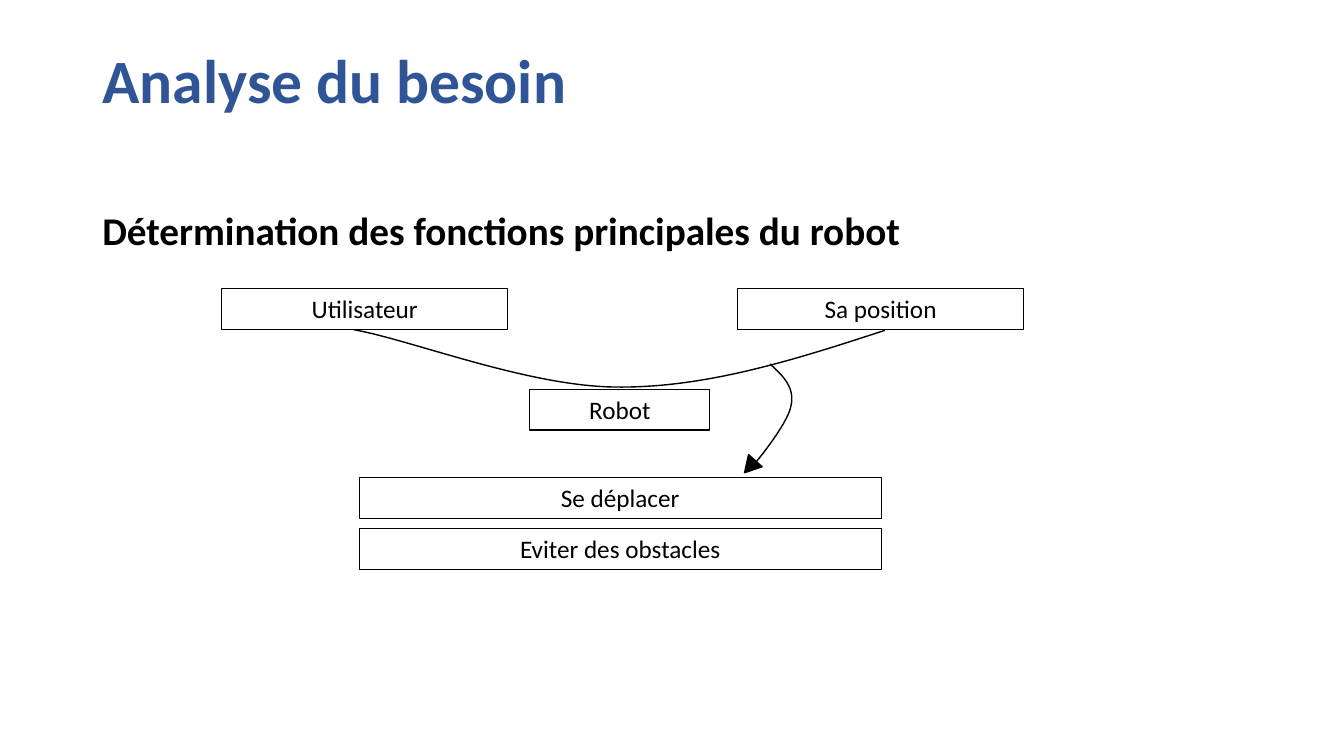
from pptx import Presentation
from pptx.dml.color import RGBColor
from pptx.enum import shapes as kinds, text as txt
from pptx.oxml import ns, xmlchemy
from pptx.util import Pt

BLACK = RGBColor(0x00, 0x00, 0x00)
BLUE = RGBColor(0x2F, 0x55, 0x97)
BOX_HEIGHT = 29.2


def place(shape, left, top, width, height):
    shape.left, shape.top = Pt(left), Pt(top)
    shape.width, shape.height = Pt(width), Pt(height)


def write(shape, words, size, color=BLACK, bold=False,
          align=txt.PP_ALIGN.LEFT, spacing=0.9):
    frame = shape.text_frame
    frame.word_wrap = True
    frame.auto_size = txt.MSO_AUTO_SIZE.NONE
    frame.vertical_anchor = txt.MSO_ANCHOR.MIDDLE
    paragraph = frame.paragraphs[0]
    paragraph.alignment = align
    paragraph.line_spacing = spacing
    run = paragraph.add_run()
    run.text = words
    run.font.name = "Calibri"
    run.font.size = Pt(size)
    run.font.bold = bold
    run.font.color.rgb = color


def outline(shape, width):
    shape.shadow.inherit = False
    shape.line.color.rgb = BLACK
    shape.line.width = Pt(width)


def add_box(slide, words, left, top, width):
    box = slide.shapes.add_shape(kinds.MSO_SHAPE.RECTANGLE, Pt(left), Pt(top),
                                 Pt(width), Pt(BOX_HEIGHT))
    box.fill.background()
    outline(box, 0.75)
    write(box, words, 18, align=txt.PP_ALIGN.CENTER, spacing=1.0)


def add_curve(slide, start, controls):
    builder = slide.shapes.build_freeform(Pt(start[0]), Pt(start[1]))
    builder.add_line_segments([(Pt(x), Pt(y)) for x, y in controls], close=False)
    curve = builder.convert_to_shape()
    curve.fill.background()
    outline(curve, 1)
    outline_path = next(curve.element.iter(ns.qn("a:path")))
    segments = outline_path.findall(ns.qn("a:lnTo"))
    for first in range(0, len(segments), 3):
        bezier = xmlchemy.OxmlElement("a:cubicBezTo")
        for segment in segments[first:first + 3]:
            bezier.append(segment[0])
            outline_path.remove(segment)
        outline_path.append(bezier)


def add_arrowhead(slide, left, top, width, height, angle):
    head = slide.shapes.add_shape(kinds.MSO_SHAPE.ISOSCELES_TRIANGLE, Pt(left),
                                  Pt(top), Pt(width), Pt(height))
    head.rotation = angle
    head.fill.solid()
    head.fill.fore_color.rgb = BLACK
    outline(head, 1)


def main():
    deck = Presentation()
    deck.slide_width, deck.slide_height = Pt(960), Pt(540)
    slide = deck.slides.add_slide(deck.slide_layouts[5])

    title = slide.shapes.title
    place(title, 66, 28.8, 828, 62)
    write(title, "Analyse du besoin", 44, BLUE, bold=True)

    subtitle = slide.shapes.add_textbox(Pt(66), Pt(147.5), Pt(828), Pt(38))
    write(subtitle, "Détermination des fonctions principales du robot", 28, bold=True)

    for words, left, top, width in (
        ("Utilisateur", 158.5, 206, 204),
        ("Sa position", 527, 206, 204),
        ("Robot", 378.5, 278, 128.5),
        ("Se déplacer", 256.5, 341, 373),
        ("Eviter des obstacles", 256.5, 377.5, 373),
    ):
        add_box(slide, words, left, top, width)

    add_curve(slide, (632, 236), [(568, 257), (504.5, 277), (441.5, 276.5),
                                  (378, 276.5), (293, 242.5), (252.5, 235.5)])
    add_curve(slide, (550, 260), [(559.5, 268.5), (568, 277), (565, 290),
                                  (563, 302.5), (538, 333.5), (535, 335.5)])
    add_arrowhead(slide, 529.2, 327.6, 13, 11.5, 222)

    deck.save("out.pptx")


if __name__ == "__main__":
    main()
